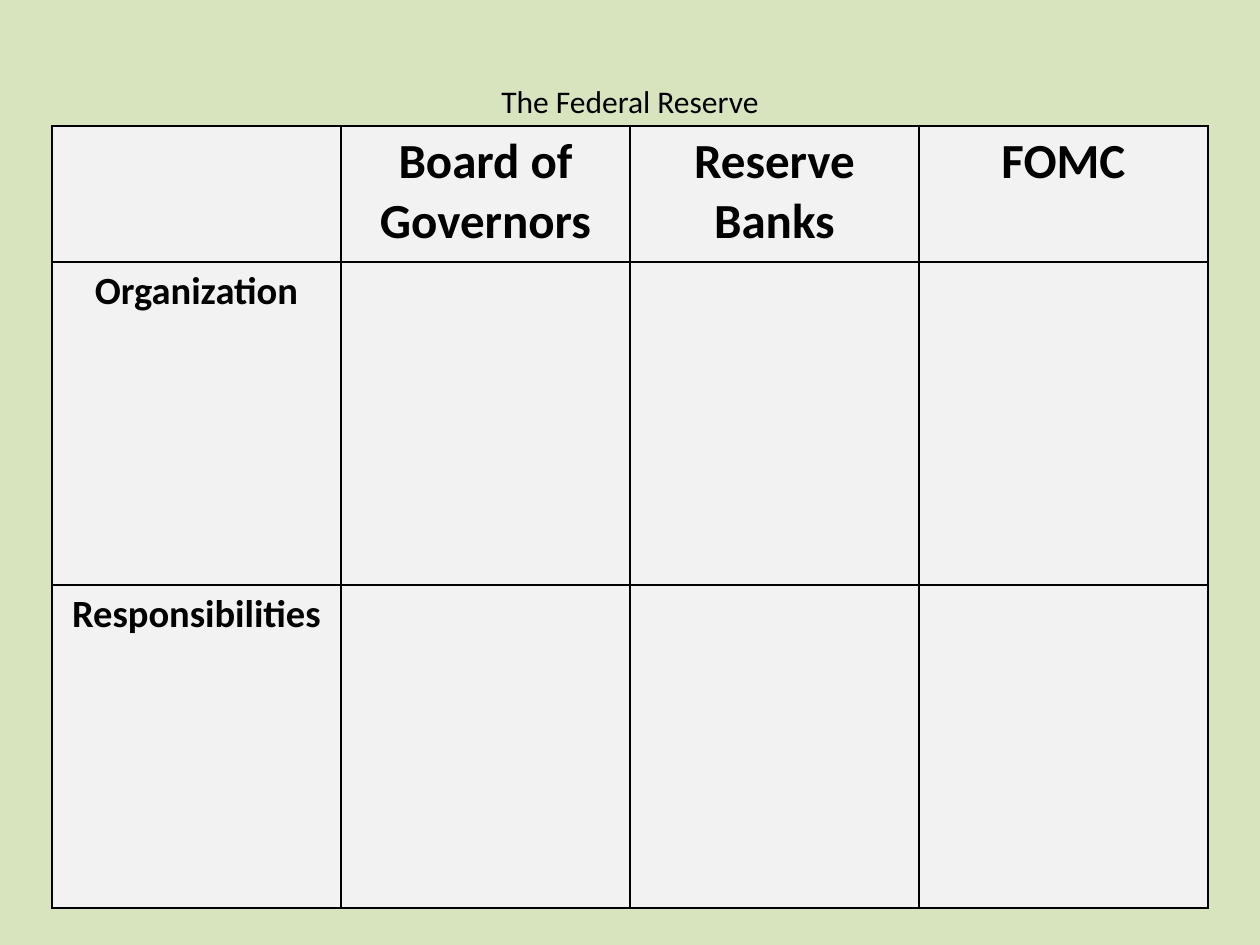
from dataclasses import dataclass

from lxml.etree import SubElement
from pptx import Presentation
from pptx.dml.color import RGBColor
from pptx.enum.text import MSO_ANCHOR as Anchor, PP_ALIGN as Align
from pptx.oxml.ns import qn
from pptx.util import Emu, Pt

PX = 914400 / 126


def px(length):
    return Emu(round(length * PX))


@dataclass(frozen=True)
class Theme:
    font: str = "Calibri"
    background: str = "D7E4BD"
    cell: str = "F2F2F2"
    ink: str = "000000"
    title_size: int = 18
    header_size: int = 28
    label_size: int = 22
    border: int = 1


class SlideBuilder:
    def __init__(self, slide, theme):
        self.slide = slide
        self.theme = theme

    def background(self):
        fill = self.slide.background.fill
        fill.solid()
        fill.fore_color.rgb = RGBColor.from_string(self.theme.background)

    def set_text(self, frame, text, size, bold=False):
        frame.text = text
        paragraph = frame.paragraphs[0]
        paragraph.alignment = Align.CENTER
        font = paragraph.font
        font.name, font.size, font.bold = self.theme.font, Pt(size), bold
        font.color.rgb = RGBColor.from_string(self.theme.ink)

    def title(self, text, left, top, width, height):
        title = self.slide.shapes.title
        title.left, title.top = px(left), px(top)
        title.width, title.height = px(width), px(height)
        title.text_frame.vertical_anchor = Anchor.MIDDLE
        self.set_text(title.text_frame, text, self.theme.title_size)

    def borders(self, cell):
        properties = cell._tc.get_or_add_tcPr()
        # Border lines must come before the fill in the cell properties
        for position, side in enumerate(("lnL", "lnR", "lnT", "lnB")):
            line = SubElement(properties, qn(f"a:{side}"), w=str(Pt(self.theme.border)))
            solid = SubElement(line, qn("a:solidFill"))
            SubElement(solid, qn("a:srgbClr"), val=self.theme.ink)
            properties.insert(position, line)

    def table(self, rows, left, top, column_width, row_heights):
        columns = len(rows[0])
        table = self.slide.shapes.add_table(
            len(rows), columns, px(left), px(top),
            px(column_width * columns), px(sum(row_heights))).table
        for column in table.columns:
            column.width = px(column_width)
        for r, (texts, height) in enumerate(zip(rows, row_heights)):
            table.rows[r].height = px(height)
            size = self.theme.label_size if r else self.theme.header_size
            for c, text in enumerate(texts):
                cell = table.cell(r, c)
                cell.fill.solid()
                cell.fill.fore_color.rgb = RGBColor.from_string(self.theme.cell)
                self.borders(cell)
                if text:
                    self.set_text(cell.text_frame, text, size, bold=True)


def main():
    deck = Presentation()
    deck.slide_width, deck.slide_height = px(1260), px(945)
    title_only = deck.slide_layouts[5]
    builder = SlideBuilder(deck.slides.add_slide(title_only), Theme())
    builder.background()

    # Heading
    builder.title("The Federal Reserve", 310, 76, 640, 50)

    # Worksheet grid: bodies of the Federal Reserve against their aspects
    bodies = ["Board of Governors", "Reserve Banks", "FOMC"]
    aspects = ["Organization", "Responsibilities"]
    blanks = [""] * len(bodies)
    grid = [["", *bodies]] + [[aspect, *blanks] for aspect in aspects]
    builder.table(grid, 52, 126, 289, [136, 323, 323])

    deck.save("out.pptx")


if __name__ == "__main__":
    main()
